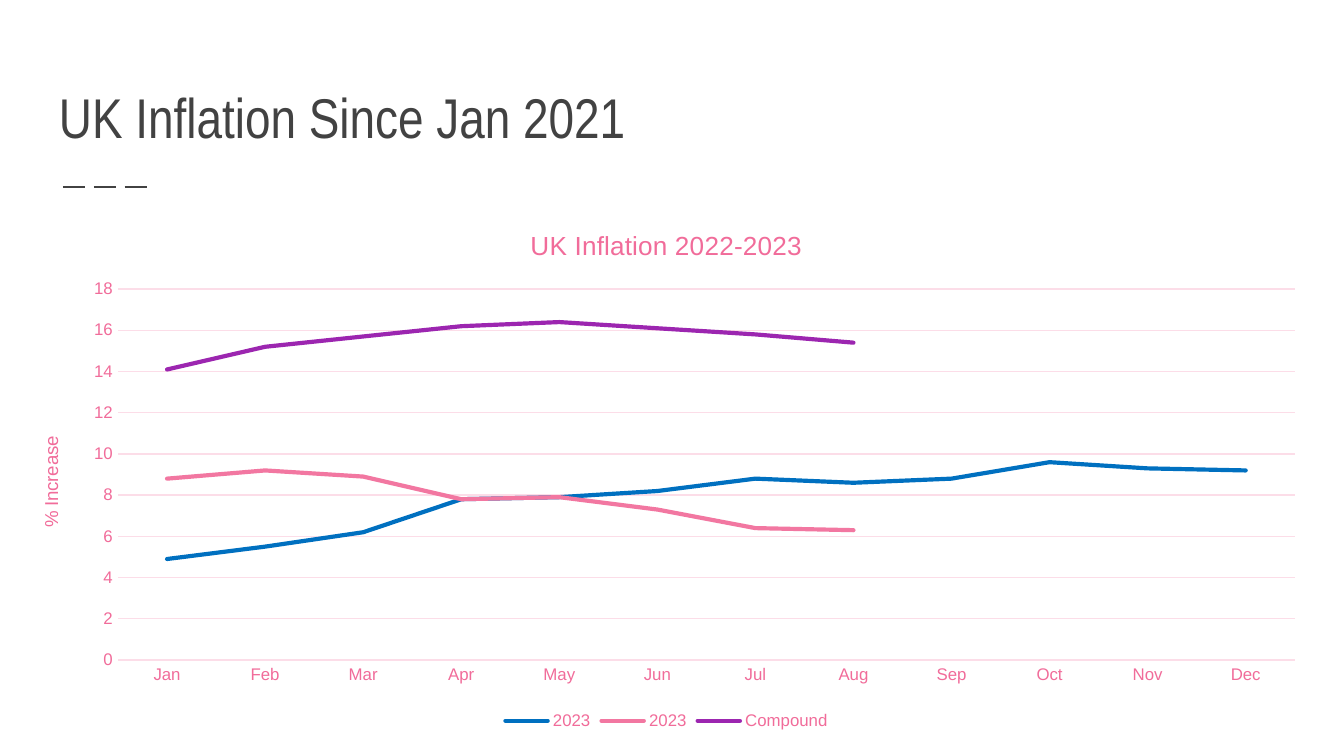
from typing import NamedTuple, Optional

from lxml.etree import SubElement
from pptx import Presentation
from pptx.chart.data import CategoryChartData
from pptx.dml.color import RGBColor
from pptx.enum.chart import XL_CHART_TYPE as ChartType
from pptx.enum.chart import XL_LEGEND_POSITION as LegendPosition
from pptx.enum.chart import XL_TICK_MARK as TickMark
from pptx.enum.dml import MSO_LINE as LineDash
from pptx.enum.shapes import MSO_CONNECTOR as Connector
from pptx.enum.text import MSO_ANCHOR as Anchor
from pptx.oxml import parse_xml
from pptx.oxml.ns import nsdecls, qn
from pptx.util import Emu, Pt

SLIDE_WIDTH, SLIDE_HEIGHT = 1344, 756
EMU_PER_PX = 9144000 / SLIDE_WIDTH

DARK_GREY = RGBColor(0x42, 0x42, 0x42)
LABEL_PINK = RGBColor(0xF1, 0x6C, 0x9A)
GRID_PINK = RGBColor(0xFC, 0xDD, 0xE8)
BLUE = RGBColor(0x00, 0x70, 0xC0)
PINK = RGBColor(0xF2, 0x77, 0xA1)
PURPLE = RGBColor(0x9C, 0x26, 0xB0)

MONTHS = "Jan Feb Mar Apr May Jun Jul Aug Sep Oct Nov Dec".split()


class Box(NamedTuple):
    left: int
    top: int
    width: int
    height: int


class InflationSeries(NamedTuple):
    name: str
    values: list[Optional[float]]
    color: RGBColor


TITLE_BOX = Box(46, 55, 1253, 108)
CHART_BOX = Box(12, 206, 1309, 530)
PLOT_BOX = Box(118, 289, 1177, 371)
NO_DATA = [None] * 4
SERIES = [
    InflationSeries("2023", [4.9, 5.5, 6.2, 7.8, 7.9, 8.2, 8.8, 8.6, 8.8, 9.6, 9.3, 9.2], BLUE),
    InflationSeries("2023", [8.8, 9.2, 8.9, 7.8, 7.9, 7.3, 6.4, 6.3] + NO_DATA, PINK),
    InflationSeries("Compound", [14.1, 15.2, 15.7, 16.2, 16.4, 16.1, 15.8, 15.4] + NO_DATA, PURPLE),
]


def px(length: int) -> Emu:
    return Emu(round(length * EMU_PER_PX))


def style_font(font, size: float, color: RGBColor, name: str = "Arial") -> None:
    font.size = Pt(size)
    font.name = name
    font.bold = False
    font.color.rgb = color


def style_line(line, color: RGBColor, width: float) -> None:
    line.color.rgb = color
    line.width = Pt(width)


def add_title(slide, box: Box, text: str) -> None:
    text_frame = slide.shapes.add_textbox(*map(px, box)).text_frame
    text_frame.word_wrap = True
    text_frame.vertical_anchor = Anchor.BOTTOM
    text_frame.margin_left = text_frame.margin_right = px(13)
    text_frame.margin_top = text_frame.margin_bottom = px(13)
    text_frame.text = text
    style_font(text_frame.paragraphs[0].runs[0].font, 30, DARK_GREY, "Arial Narrow")


def add_dashed_rule(slide, left: int, right: int, top: int) -> None:
    rule = slide.shapes.add_connector(Connector.STRAIGHT, px(left), px(top), px(right), px(top))
    style_line(rule.line, DARK_GREY, 1.5)
    rule.line.dash_style = LineDash.LONG_DASH
    SubElement(rule.element.spPr, qn("a:effectLst"))


def set_heading(owner, text: str, size: float) -> None:
    """Give a chart or an axis its title."""
    text_frame = owner.text_frame
    text_frame.text = text
    style_font(text_frame.paragraphs[0].runs[0].font, size, LABEL_PINK)


def place_plot(chart, chart_box: Box, plot_box: Box) -> None:
    """Fix the inner plot area as fractions of the chart."""
    fractions = {
        "x": (plot_box.left - chart_box.left) / chart_box.width,
        "y": (plot_box.top - chart_box.top) / chart_box.height,
        "w": plot_box.width / chart_box.width,
        "h": plot_box.height / chart_box.height,
    }
    modes = '<c:layoutTarget val="inner"/><c:xMode val="edge"/><c:yMode val="edge"/>'
    values = "".join(f'<c:{key} val="{value:.3f}"/>' for key, value in fractions.items())
    layout = parse_xml(
        f'<c:layout {nsdecls("c")}><c:manualLayout>{modes}{values}</c:manualLayout></c:layout>'
    )
    plot_area = chart.element.find(".//" + qn("c:plotArea"))
    for old_layout in plot_area.findall(qn("c:layout")):
        plot_area.remove(old_layout)
    plot_area.insert(0, layout)


def add_inflation_chart(slide, box: Box, series_list: list[InflationSeries]) -> None:
    data = CategoryChartData()
    data.categories = MONTHS
    for item in series_list:
        data.add_series(item.name, item.values)
    chart = slide.shapes.add_chart(ChartType.LINE, *map(px, box), data).chart
    style_font(chart.font, 10, LABEL_PINK)
    chart.has_title = True
    set_heading(chart.chart_title, "UK Inflation 2022-2023", 14)
    chart.chart_title.include_in_layout = False
    place_plot(chart, box, PLOT_BOX)

    # Series lines
    chart.plots[0].vary_by_categories = False
    for series, item in zip(chart.plots[0].series, series_list):
        series.smooth = False
        style_line(series.format.line, item.color, 2.25)
        series.format.line._get_or_add_ln().set("cap", "rnd")

    # Axes
    for axis in (chart.category_axis, chart.value_axis):
        axis.major_tick_mark = axis.minor_tick_mark = TickMark.NONE
        style_font(axis.tick_labels.font, 9, LABEL_PINK)
    style_line(chart.category_axis.format.line, GRID_PINK, 0.75)
    value_axis = chart.value_axis
    value_axis.minimum_scale, value_axis.maximum_scale, value_axis.major_unit = 0, 18, 2
    value_axis.format.line.fill.background()
    style_line(value_axis.major_gridlines.format.line, GRID_PINK, 0.75)
    set_heading(value_axis.axis_title, "% Increase", 10)

    # Legend
    chart.has_legend = True
    chart.legend.position = LegendPosition.BOTTOM
    chart.legend.include_in_layout = False
    style_font(chart.legend.font, 9, LABEL_PINK)


def main() -> None:
    presentation = Presentation()
    presentation.slide_width = px(SLIDE_WIDTH)
    presentation.slide_height = px(SLIDE_HEIGHT)
    slide = presentation.slides.add_slide(presentation.slide_layouts[6])
    add_dashed_rule(slide, 63, 153, 187)
    add_title(slide, TITLE_BOX, "UK Inflation Since Jan 2021")
    add_inflation_chart(slide, CHART_BOX, SERIES)
    presentation.save("out.pptx")


if __name__ == "__main__":
    main()
